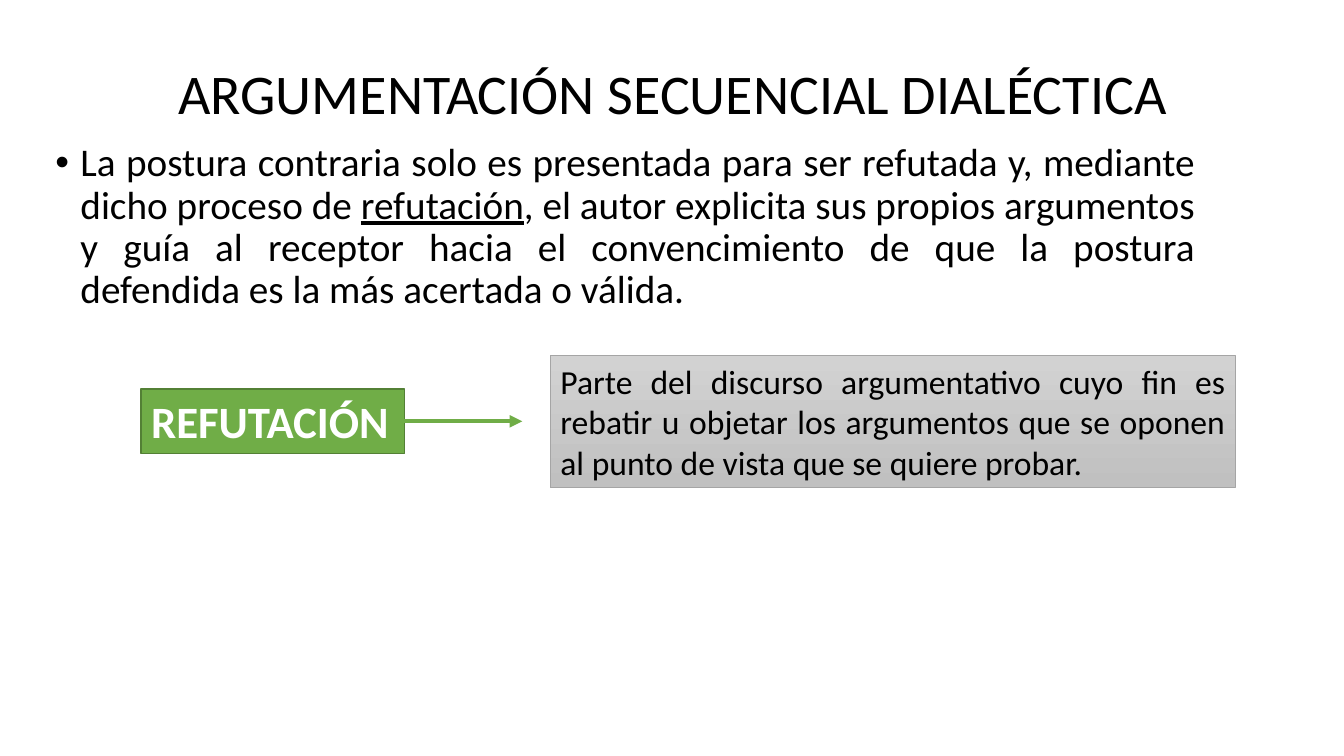
from dataclasses import dataclass

from lxml import etree
from pptx import Presentation
from pptx.dml.color import RGBColor
from pptx.enum import shapes as es, text as et
from pptx.oxml import ns
from pptx.util import Inches, Pt


@dataclass(frozen=True)
class Theme:
    font: str = "Calibri"
    ink: str = "000000"
    white: str = "FFFFFF"
    green: str = "70AD47"
    edge: str = "538035"
    gray: str = "A5A5A5"
    fade: tuple[str, str] = ("D2D2D2", "C0C0C0")
    title: int = 40
    body: int = 28
    term: int = 32
    note: int = 24


@dataclass(frozen=True)
class Box:
    left: float
    top: float
    width: float
    height: float

    def lengths(self) -> list[Inches]:
        return [Inches(v) for v in (self.left, self.top, self.width, self.height)]


@dataclass(frozen=True)
class Panel:
    box: Box
    fill: tuple[str, ...]
    edge: str
    weight: float
    words: str
    style: dict


THEME = Theme()
ALIGN = et.PP_ALIGN
TITLE = Box(0.92, 0.4, 11.5, 1.11)
BODY = Box(0.45, 1.37, 11.5, 2.02)

PANELS = (
    Panel(Box(1.4, 3.86, 2.61, 0.64), (THEME.green,), THEME.edge, 1, "REFUTACIÓN",
          dict(size=THEME.term, color=THEME.white, bold=True)),
    Panel(Box(5.46, 3.53, 6.79, 1.31), THEME.fade, THEME.gray, 0.5,
          "Parte del discurso argumentativo cuyo fin es rebatir u objetar los "
          "argumentos que se oponen al punto de vista que se quiere probar.",
          dict(size=THEME.note, align=ALIGN.JUSTIFY)),
)


def rgb(code: str) -> RGBColor:
    return RGBColor.from_string(code)


def write(shape, *parts: str, size: int, color: str = THEME.ink, bold: bool = False,
          align=ALIGN.LEFT, anchor=et.MSO_ANCHOR.TOP, space: float = 1.0,
          bullet: str = "", under: str = "", grow: bool = False) -> None:
    """Fill a shape with one paragraph; the part equal to under is underlined."""
    frame = shape.text_frame
    frame.word_wrap = True
    frame.vertical_anchor = anchor
    frame.auto_size = (et.MSO_AUTO_SIZE.SHAPE_TO_FIT_TEXT if grow
                       else et.MSO_AUTO_SIZE.NONE)
    para = frame.paragraphs[0]
    para.alignment = align
    para.line_spacing = space
    if bullet:
        props = para._p.get_or_add_pPr()
        props.set("marL", str(Inches(0.25)))
        props.set("indent", str(Inches(-0.25)))
        etree.SubElement(props, ns.qn("a:buFont"), typeface="Arial")
        etree.SubElement(props, ns.qn("a:buChar"), char=bullet)
    for part in parts:
        run = para.add_run()
        run.text = part
        font = run.font
        font.name, font.size, font.bold = THEME.font, Pt(size), bold
        font.color.rgb = rgb(color)
        if part == under:
            font.underline = True


def draw_panel(slide, panel: Panel) -> None:
    shape = slide.shapes.add_shape(es.MSO_SHAPE.RECTANGLE, *panel.box.lengths())
    shape.shadow.inherit = False
    if len(panel.fill) == 1:
        shape.fill.solid()
        shape.fill.fore_color.rgb = rgb(panel.fill[0])
    else:
        shape.fill.gradient()
        shape.fill.gradient_angle = 270
        for stop, code in zip(shape.fill.gradient_stops, panel.fill):
            stop.color.rgb = rgb(code)
    shape.line.color.rgb = rgb(panel.edge)
    shape.line.width = Pt(panel.weight)
    write(shape, panel.words, anchor=et.MSO_ANCHOR.TOP, grow=True, **panel.style)


def draw_arrow(slide, start: float, end: float, y: float) -> None:
    arrow = slide.shapes.add_connector(
        es.MSO_CONNECTOR.STRAIGHT, Inches(start), Inches(y), Inches(end), Inches(y))
    arrow.line.color.rgb = rgb(THEME.green)
    arrow.line.width = Pt(3)
    etree.SubElement(arrow.line._get_or_add_ln(), ns.qn("a:tailEnd"), type="triangle")
    etree.SubElement(arrow._element.spPr, ns.qn("a:effectLst"))


def main() -> None:
    deck = Presentation()
    deck.slide_width, deck.slide_height = Inches(13.33), Inches(7.5)
    slide = deck.slides.add_slide(deck.slide_layouts[6])

    # Title and definition
    write(slide.shapes.add_textbox(*TITLE.lengths()),
          "ARGUMENTACIÓN SECUENCIAL DIALÉCTICA", size=THEME.title,
          align=ALIGN.CENTER, anchor=et.MSO_ANCHOR.MIDDLE, space=0.9)
    write(slide.shapes.add_textbox(*BODY.lengths()),
          "La postura contraria solo es presentada para ser refutada y, "
          "mediante dicho proceso de ",
          "refutación",
          ", el autor explicita sus propios argumentos y guía al receptor hacia "
          "el convencimiento de que la postura defendida es la más acertada o válida.",
          size=THEME.body, align=ALIGN.JUSTIFY, space=0.9, bullet="•",
          under="refutación")

    # Term, its meaning and the arrow between them
    for panel in PANELS:
        draw_panel(slide, panel)
    term = PANELS[0].box
    draw_arrow(slide, term.left + term.width, 5.18, term.top + term.height / 2)

    deck.save("out.pptx")


if __name__ == "__main__":
    main()
